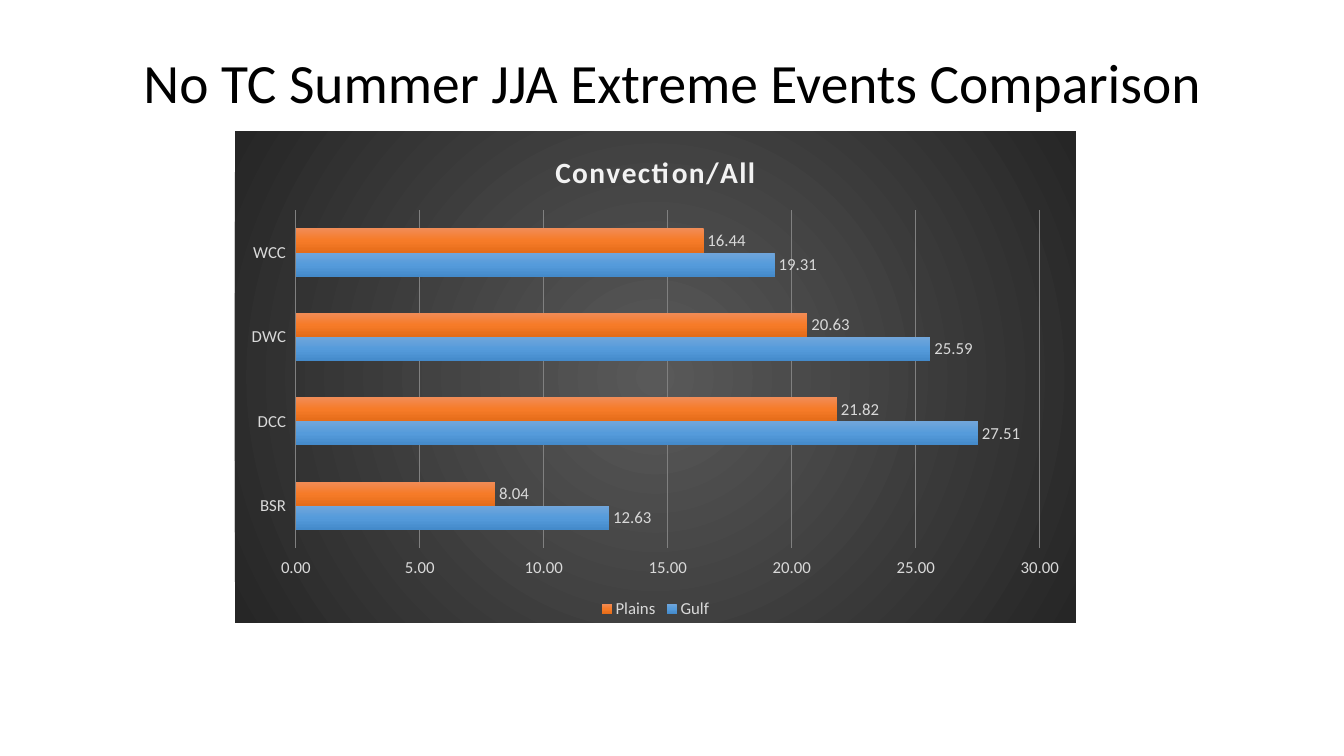
from lxml import etree
from pptx import Presentation, util as u
from pptx.chart.data import CategoryChartData
from pptx.dml.color import RGBColor
from pptx.enum import chart as ch, text
from pptx.oxml import ns

HEADING = "No TC Summer JJA Extreme Events Comparison"
CHART_TITLE = "Convection/All"
CATEGORIES = ["BSR", "DCC", "DWC", "WCC"]
REGIONS = {
    "Gulf": [12.63, 27.51, 25.59, 19.31],
    "Plains": [8.04, 21.82, 20.63, 16.44],
}
SLIDE = (13.33, 7.5)
HEADING_BOX = (0.92, 0.4, 11.5, 0.9)
CHART_BOX = (2.33, 1.3, 8.34, 4.88)
SCALE = {"top": 30, "step": 5, "format": "0.00"}
THEME = {
    "font": "Calibri",
    "heading": (39.6, "000000"),
    "title": (21, "F2F2F2"),
    "label": (12, "D9D9D9"),
    "grid": "808080",
    "backdrop": ["595959", "262626"],
    "Gulf": ["71A6DB", "559BDB", "448ACA"],
    "Plains": ["F18C57", "F67B28", "E56C19"],
}


def set_font(font, role):
    size, colour = THEME[role]
    font.name, font.size = THEME["font"], u.Pt(size)
    font.color.rgb = RGBColor.from_string(colour)


def add_node(parent, tag, **attributes):
    return etree.SubElement(parent, ns.qn(tag), {k: str(v) for k, v in attributes.items()})


def gradient(role, radial=False):
    fill = etree.Element(ns.qn("a:gradFill"), rotWithShape="1")
    stops = add_node(fill, "a:gsLst")
    colours = THEME[role]
    for i, colour in enumerate(colours):
        stop = add_node(stops, "a:gs", pos=100000 * i // (len(colours) - 1))
        add_node(stop, "a:srgbClr", val=colour)
    if radial:
        centre = add_node(fill, "a:path", path="circle")
        add_node(centre, "a:fillToRect", l=50000, t=50000, r=50000, b=50000)
    else:
        add_node(fill, "a:lin", ang=5400000, scaled=0)
    return fill


def add_heading(slide):
    frame = slide.shapes.add_textbox(*map(u.Inches, HEADING_BOX)).text_frame
    frame.word_wrap = True
    frame.vertical_anchor = text.MSO_ANCHOR.MIDDLE
    heading = frame.paragraphs[0]
    heading.text = HEADING
    heading.alignment = text.PP_ALIGN.CENTER
    heading.line_spacing = 0.9
    set_font(heading.font, "heading")


def style_title(chart):
    chart.has_title = True
    chart.chart_title.include_in_layout = False
    title = chart.chart_title.text_frame.paragraphs[0]
    title.text = CHART_TITLE
    set_font(title.font, "title")
    title.font.bold = True
    title.runs[0].font.bold = True
    title.runs[0]._r.get_or_add_rPr().set("spc", "100")


def style_axes(chart):
    for axis in (chart.category_axis, chart.value_axis):
        set_font(axis.tick_labels.font, "label")
        axis.format.line.fill.background()
    values = chart.value_axis
    values.minimum_scale, values.maximum_scale = 0, SCALE["top"]
    values.major_unit = SCALE["step"]
    values.tick_labels.number_format = SCALE["format"]
    values.tick_labels.number_format_is_linked = False
    values.has_major_gridlines = True
    grid = values.major_gridlines.format.line
    grid.width = u.Pt(0.75)
    grid.color.rgb = RGBColor.from_string(THEME["grid"])


def style_bars(chart):
    plot = chart.plots[0]
    plot.vary_by_categories = False
    plot.gap_width, plot.overlap = 150, 0
    for region in plot.series:
        region.format.fill.solid()
        solid = region._element.find(ns.qn("c:spPr")).find(ns.qn("a:solidFill"))
        solid.getparent().replace(solid, gradient(region.name))
        labels = region.data_labels
        labels.show_value = True
        labels.number_format = SCALE["format"]
        labels.number_format_is_linked = False
        labels.position = ch.XL_LABEL_POSITION.OUTSIDE_END
        set_font(labels.font, "label")


def style_backdrop(chart):
    backdrop = etree.Element(ns.qn("c:spPr"))
    backdrop.append(gradient("backdrop", radial=True))
    add_node(add_node(backdrop, "a:ln"), "a:noFill")
    chart._chartSpace.find(ns.qn("c:chart")).addnext(backdrop)


def add_comparison(slide):
    data = CategoryChartData(number_format=SCALE["format"])
    data.categories = CATEGORIES
    for region, shares in REGIONS.items():
        data.add_series(region, shares)
    chart = slide.shapes.add_chart(
        ch.XL_CHART_TYPE.BAR_CLUSTERED, *map(u.Inches, CHART_BOX), data).chart
    set_font(chart.font, "label")
    style_title(chart)
    style_axes(chart)
    style_bars(chart)
    chart.has_legend = True
    chart.legend.position = ch.XL_LEGEND_POSITION.BOTTOM
    chart.legend.include_in_layout = False
    set_font(chart.legend.font, "label")
    style_backdrop(chart)


def main():
    deck = Presentation()
    deck.slide_width, deck.slide_height = map(u.Inches, SLIDE)
    slide = deck.slides.add_slide(deck.slide_layouts[6])
    add_heading(slide)
    add_comparison(slide)
    deck.save("out.pptx")


if __name__ == "__main__":
    main()
